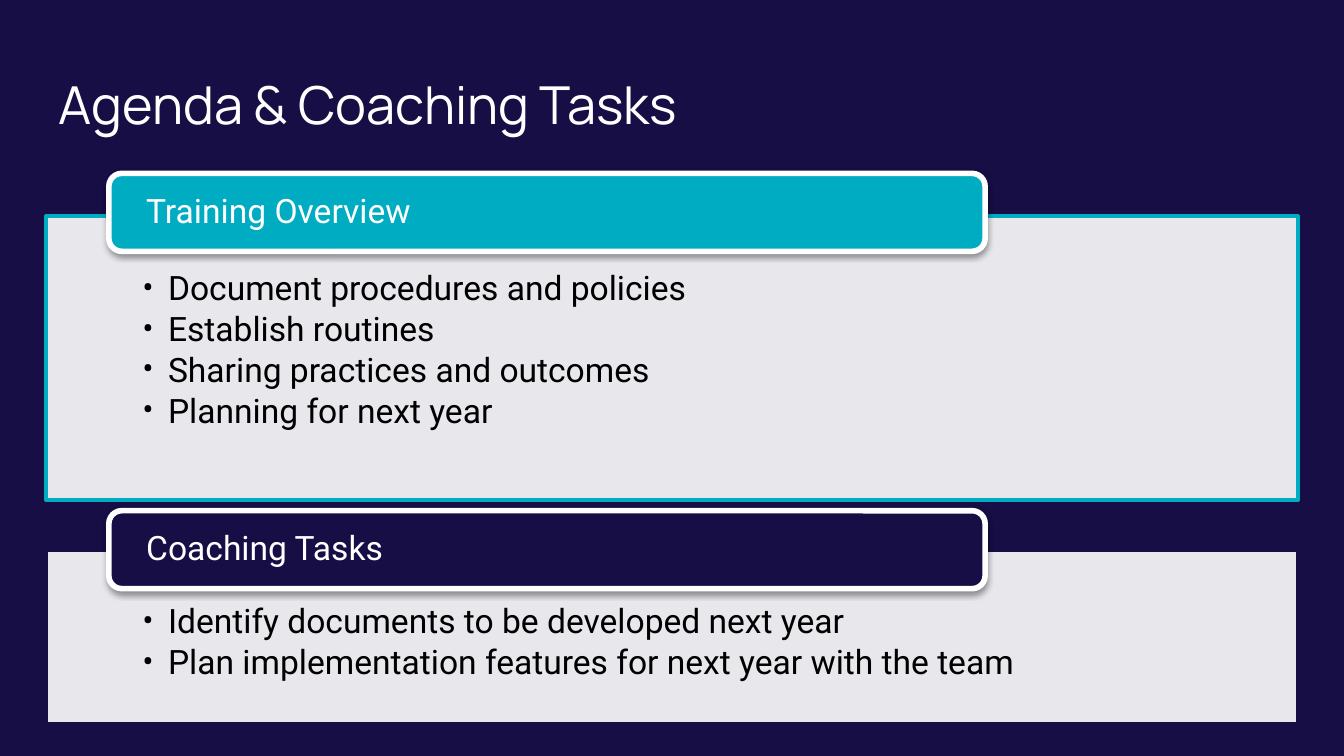
from lxml import etree
from pptx import Presentation
from pptx.dml.color import RGBColor
from pptx.enum.shapes import MSO_SHAPE
from pptx.enum.text import MSO_ANCHOR, PP_ALIGN
from pptx.oxml import parse_xml
from pptx.oxml.ns import nsdecls, qn
from pptx.util import Inches, Pt

RECTANGLE = MSO_SHAPE.RECTANGLE
ROUNDED = MSO_SHAPE.ROUNDED_RECTANGLE
TOP, MIDDLE = MSO_ANCHOR.TOP, MSO_ANCHOR.MIDDLE
LEFT = PP_ALIGN.LEFT
NAVY, TEAL, WHITE, BLACK = "160E44", "00ACC2", "FFFFFF", "000000"

SHADOW = (
    f'<a:effectLst {nsdecls("a")}>'
    '<a:outerShdw blurRad="40000" dist="20000" dir="5400000" rotWithShape="0">'
    '<a:srgbClr val="000000"><a:alpha val="38000"/></a:srgbClr>'
    "</a:outerShdw></a:effectLst>"
)


def color(value):
    return RGBColor.from_string(value)


def write(box, lines, size, font, ink, anchor, insets, bullets=False):
    frame = box.text_frame
    frame.word_wrap = True
    frame.vertical_anchor = anchor
    left, top, right, bottom = [Inches(inset) for inset in insets]
    frame.margin_left, frame.margin_top = left, top
    frame.margin_right, frame.margin_bottom = right, bottom
    for index, line in enumerate(lines):
        para = frame.add_paragraph() if index else frame.paragraphs[0]
        para.alignment = LEFT
        para.line_spacing = 0.9
        if bullets:
            para.level = 1
            para.space_after = Pt(2.5)
            properties = para._p.get_or_add_pPr()
            properties.set("marL", str(Inches(0.19)))
            properties.set("indent", str(Inches(-0.19)))
            bullet_color = etree.SubElement(properties, qn("a:buClr"))
            etree.SubElement(bullet_color, qn("a:srgbClr")).set("val", ink)
            etree.SubElement(properties, qn("a:buFont")).set("typeface", font)
            etree.SubElement(properties, qn("a:buChar")).set("char", "•")
        span = para.add_run()
        span.text = line
        span.font.size = Pt(size)
        span.font.name = font
        span.font.color.rgb = color(ink)


deck = Presentation()
deck.slide_width = Inches(10)
deck.slide_height = Inches(10) * 9 // 16
page = deck.slides.add_slide(deck.slide_layouts[6])
page.background.fill.solid()
page.background.fill.fore_color.rgb = color(NAVY)

title = page.shapes.add_textbox(Inches(0.34), Inches(0.49), Inches(9.32), Inches(0.63))
write(title, ["Agenda & Coaching Tasks"], 28, "Manrope", WHITE, TOP, [0.1] * 4)

sections = [
    ("Training Overview", TEAL, 1.29, 1.61, 2.11, [
        "Document procedures and policies",
        "Establish routines",
        "Sharing practices and outcomes",
        "Planning for next year",
    ]),
    ("Coaching Tasks", NAVY, 3.8, 4.09, 1.3, [
        "Identify documents to be developed next year",
        "Plan implementation features for next year with the team",
    ]),
]

for heading, accent, tab_top, top, height, items in sections:
    panel = page.shapes.add_shape(
        RECTANGLE, Inches(0.34), Inches(top), Inches(9.32), Inches(height))
    panel.shadow.inherit = False
    panel.fill.solid()
    panel.fill.fore_color.rgb = color(WHITE)
    tint = panel._element.spPr.find(qn("a:solidFill"))[0]
    etree.SubElement(tint, qn("a:alpha")).set("val", "90000")
    panel.line.color.rgb = color(accent)
    panel.line.width = Pt(2)
    write(panel, items, 18, "Roboto", BLACK, TOP, [0.72, 0.41, 0.72, 0.14], bullets=True)

    tab = page.shapes.add_shape(
        ROUNDED, Inches(0.81), Inches(tab_top), Inches(6.52), Inches(0.58))
    tab.shadow.inherit = False
    tab.fill.solid()
    tab.fill.fore_color.rgb = color(accent)
    tab.line.color.rgb = color(WHITE)
    tab.line.width = Pt(3)
    properties = tab._element.spPr
    properties.replace(properties.find(qn("a:effectLst")), parse_xml(SHADOW))
    write(tab, [heading], 18, "Roboto", WHITE, MIDDLE, [0.25, 0, 0.25, 0])

deck.save("out.pptx")
